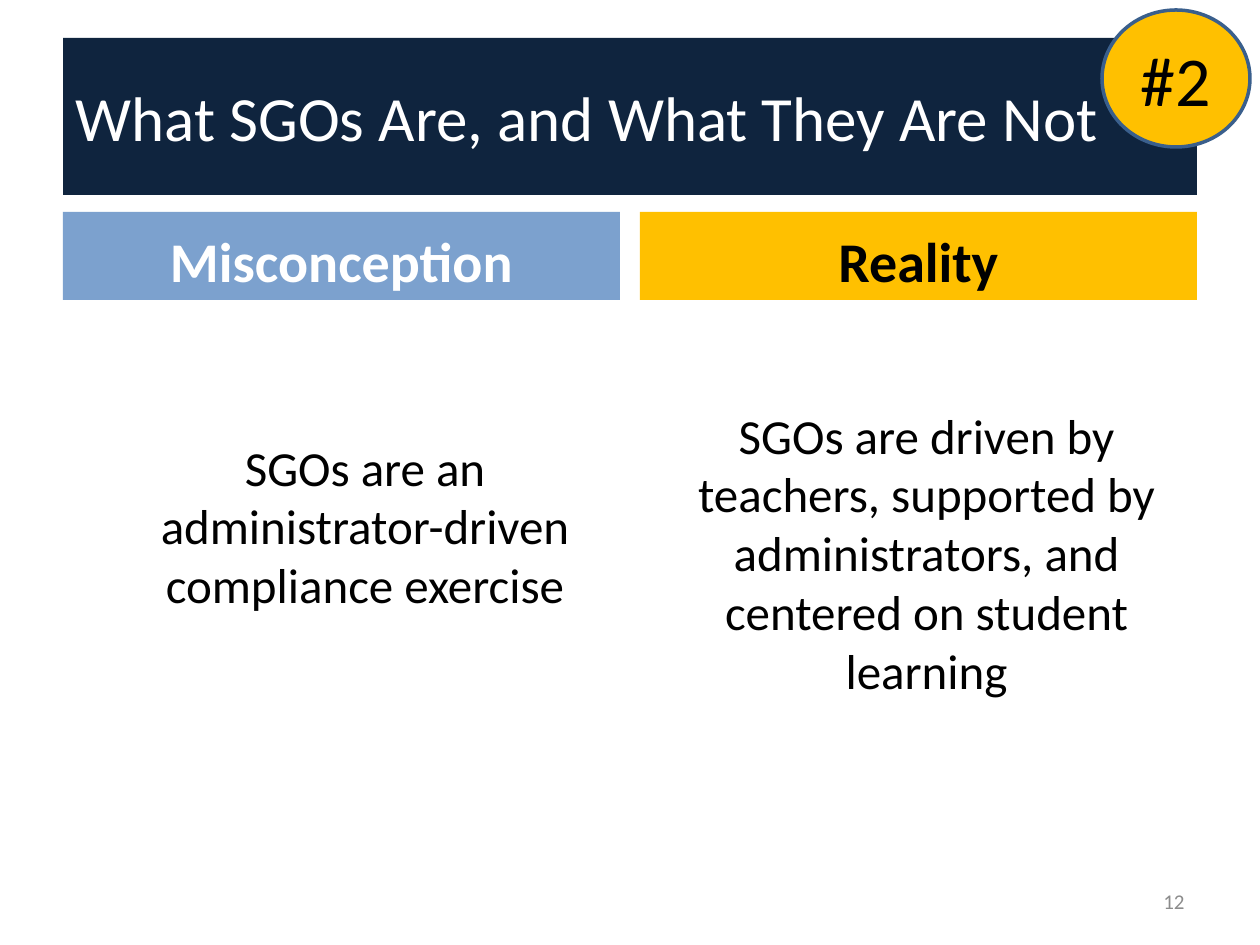
from dataclasses import dataclass
from typing import Optional

from pptx import Presentation
from pptx.dml.color import RGBColor
from pptx.enum.shapes import MSO_SHAPE
from pptx.enum.text import MSO_ANCHOR, MSO_AUTO_SIZE, PP_ALIGN
from pptx.util import Emu, Pt

RECT, OVAL = MSO_SHAPE.RECTANGLE, MSO_SHAPE.OVAL
TOP, MIDDLE, BOTTOM = MSO_ANCHOR.TOP, MSO_ANCHOR.MIDDLE, MSO_ANCHOR.BOTTOM
LEFT, CENTER, RIGHT = PP_ALIGN.LEFT, PP_ALIGN.CENTER, PP_ALIGN.RIGHT

NAVY = RGBColor(0x0F, 0x24, 0x3E)
BLUE = RGBColor(0x7C, 0xA1, 0xCE)
GOLD = RGBColor(0xFF, 0xC0, 0x00)
OUTLINE = RGBColor(0x3A, 0x5F, 0x8C)
GRAY = RGBColor(0x8C, 0x8C, 0x8C)
WHITE = RGBColor(0xFF, 0xFF, 0xFF)
BLACK = RGBColor(0x00, 0x00, 0x00)

FONT = "Calibri"
PX_PER_INCH = 126
MARGIN = 63
COLUMN_WIDTH = 557
BODY_INDENT = 47


@dataclass(frozen=True)
class Box:
    left: int
    top: int
    width: int
    height: int


@dataclass(frozen=True)
class Style:
    size: int
    color: RGBColor
    align: PP_ALIGN = CENTER
    anchor: MSO_ANCHOR = MIDDLE
    bold: bool = False
    indent: int = 0


@dataclass(frozen=True)
class Column:
    heading: str
    heading_box: Box
    fill: RGBColor
    heading_color: RGBColor
    body: str
    body_box: Box


def px(value: int) -> Emu:
    return Emu(round(value * 914400 / PX_PER_INCH))


def emu_box(box: Box) -> tuple[Emu, Emu, Emu, Emu]:
    return px(box.left), px(box.top), px(box.width), px(box.height)


def write(shape, text: str, style: Style) -> None:
    tf = shape.text_frame
    tf.word_wrap = True
    tf.auto_size = MSO_AUTO_SIZE.NONE
    tf.vertical_anchor = style.anchor
    p = tf.paragraphs[0]
    p.alignment = style.align
    if style.indent:
        p._p.get_or_add_pPr().set("marL", str(px(style.indent)))
    r = p.add_run()
    r.text = text
    r.font.name = FONT
    r.font.size = Pt(style.size)
    r.font.bold = style.bold
    r.font.color.rgb = style.color


def add_title(s, box: Box, text: str, fill: RGBColor, style: Style) -> None:
    title = s.shapes.title
    title.left, title.top, title.width, title.height = emu_box(box)
    title.fill.solid()
    title.fill.fore_color.rgb = fill
    write(title, text, style)


def add_panel(s, kind: MSO_SHAPE, box: Box, fill: RGBColor, text: str,
              style: Style, outline: Optional[RGBColor] = None) -> None:
    sp = s.shapes.add_shape(kind, *emu_box(box))
    sp.shadow.inherit = False
    sp.fill.solid()
    sp.fill.fore_color.rgb = fill
    if outline is None:
        sp.line.fill.background()
    else:
        sp.line.color.rgb = outline
        sp.line.width = Pt(2)
    write(sp, text, style)


def add_text(s, box: Box, text: str, style: Style) -> None:
    write(s.shapes.add_textbox(*emu_box(box)), text, style)


COLUMNS = [
    Column("Misconception", Box(MARGIN, 212, COLUMN_WIDTH, 88), BLUE, WHITE,
           "SGOs are an administrator-driven compliance exercise",
           Box(MARGIN, 431, COLUMN_WIDTH, 413)),
    Column("Reality", Box(640, 212, COLUMN_WIDTH, 88), GOLD, BLACK,
           "SGOs are driven by teachers, supported by administrators, "
           "and centered on student learning",
           Box(609, 399, 588, 403)),
]


def main() -> None:
    prs = Presentation()
    prs.slide_width, prs.slide_height = px(1260), px(945)
    s = prs.slides.add_slide(prs.slide_layouts[5])

    # Title band
    add_title(s, Box(MARGIN, 38, 1134, 157),
              "What SGOs Are, and What They Are Not", NAVY,
              Style(36, WHITE, align=LEFT))

    # Misconception and reality columns
    for col in COLUMNS:
        add_panel(s, RECT, col.heading_box, col.fill, col.heading,
                  Style(32, col.heading_color, anchor=BOTTOM, bold=True))
        add_text(s, col.body_box, col.body,
                 Style(28, BLACK, anchor=TOP, indent=BODY_INDENT))

    # Number badge
    add_panel(s, OVAL, Box(1102, 10, 148, 137), GOLD, "#2",
              Style(40, BLACK), OUTLINE)

    # Page number
    add_text(s, Box(903, 876, 294, 50), "12", Style(12, GRAY, align=RIGHT))

    prs.save("out.pptx")


if __name__ == "__main__":
    main()
